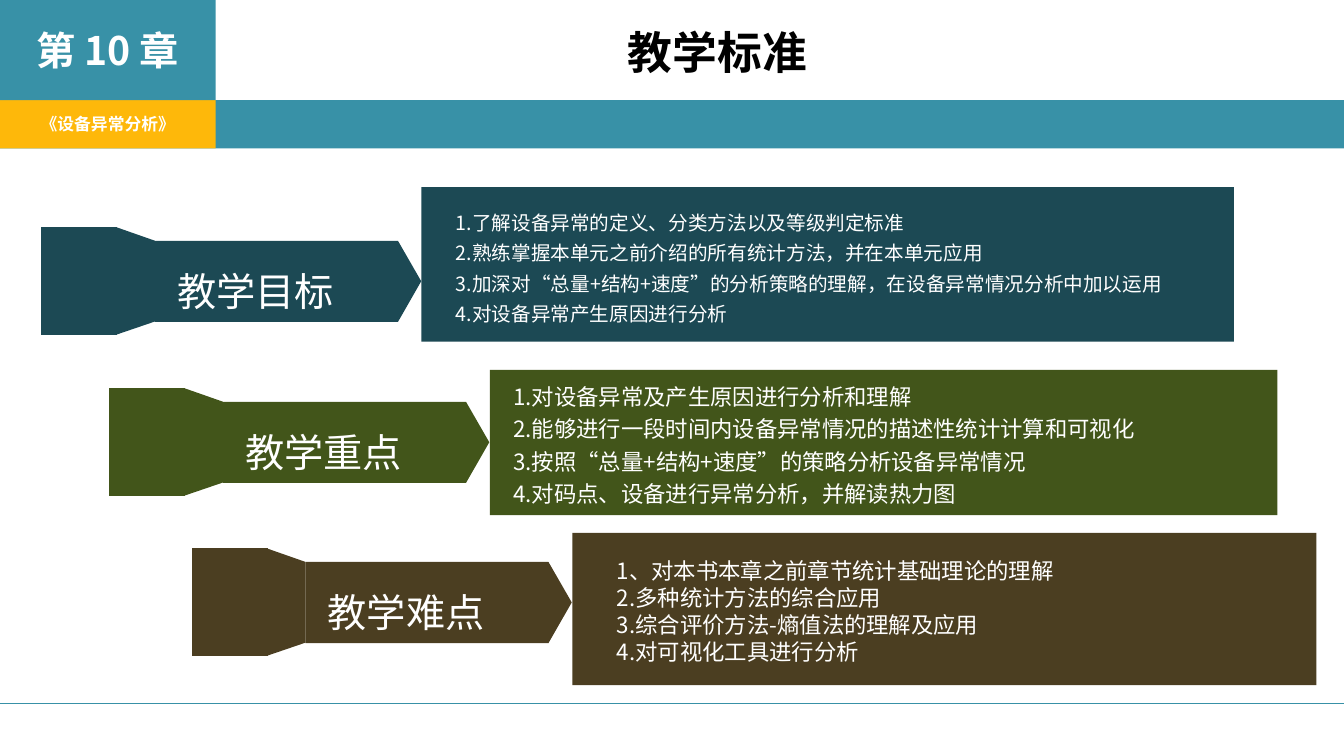
from dataclasses import dataclass

from lxml import etree
from pptx import Presentation
from pptx.dml.color import RGBColor
from pptx.enum.shapes import MSO_CONNECTOR as Link, MSO_SHAPE as Form
from pptx.enum.text import MSO_ANCHOR as Anchor, PP_ALIGN as Align
from pptx.oxml.ns import qn
from pptx.util import Pt

FONT = "Noto Sans CJK SC"
TEAL = RGBColor(0x38, 0x91, 0xA7)
GOLD = RGBColor(0xFE, 0xB8, 0x0A)
NAVY = RGBColor(0x1C, 0x49, 0x54)
OLIVE = RGBColor(0x42, 0x55, 0x1A)
BROWN = RGBColor(0x4B, 0x3E, 0x21)
WHITE = RGBColor(0xFF, 0xFF, 0xFF)
BLACK = RGBColor(0, 0, 0)

WIDE, HIGH = 960, 540
SIDE, HEAD, BAND = 154.1, 71.5, 34.5

# Outlines of one tag, measured from its top left corner
TAIL = [(0, 0), (54.5, 0), (54.5, 77), (0, 77)]
NECK = [(53.5, 0), (81.4, 9.8), (81.4, 67.5), (53.5, 77)]
ARROW = [(81.4, 9.8), (255, 9.8), (271.6, 38.7), (255, 67.7), (81.4, 67.7)]


@dataclass(frozen=True)
class Box:
    x: float
    y: float
    w: float
    h: float

    def sides(self) -> tuple:
        return Pt(self.x), Pt(self.y), Pt(self.w), Pt(self.h)


@dataclass(frozen=True)
class Topic:
    name: str
    color: RGBColor
    x: float
    y: float
    panel: Box
    body: Box
    size: float
    gap: float
    lines: tuple[str, ...]


TOPICS = [
    Topic("教学目标", NAVY, 29.3, 162.2,
          Box(301, 133.7, 580.3, 110.4), Box(325.6, 145.3, 552, 90), 14, 1.3,
          ("1.了解设备异常的定义、分类方法以及等级判定标准",
           "2.熟练掌握本单元之前介绍的所有统计方法，并在本单元应用",
           "3.加深对“总量+结构+速度”的分析策略的理解，在设备异常情况分析中加以运用",
           "4.对设备异常产生原因进行分析")),
    Topic("教学重点", OLIVE, 77.9, 277.2,
          Box(350, 264.3, 562.4, 103.7), Box(366.7, 270, 543.6, 92.9), 16, 1.2,
          ("1.对设备异常及产生原因进行分析和理解",
           "2.能够进行一段时间内设备异常情况的描述性统计计算和可视化",
           "3.按照“总量+结构+速度”的策略分析设备异常情况",
           "4.对码点、设备进行异常分析，并解读热力图")),
    Topic("教学难点", BROWN, 136.8, 391.6,
          Box(408.9, 380.7, 531.4, 108.8), Box(440.7, 398.2, 375, 81.4), 16, 1,
          ("1、对本书本章之前章节统计基础理论的理解",
           "2.多种统计方法的综合应用",
           "3.综合评价方法-熵值法的理解及应用",
           "4.对可视化工具进行分析")),
]


def paint(shape, color: RGBColor) -> None:
    shape.shadow.inherit = False
    shape.fill.solid()
    shape.fill.fore_color.rgb = color
    shape.line.fill.background()


def block(slide, box: Box, color: RGBColor) -> None:
    paint(slide.shapes.add_shape(Form.RECTANGLE, *box.sides()), color)


def shape(slide, dots: list, x: float, y: float, color: RGBColor) -> None:
    """Draw a closed outline with its origin at x, y."""
    spots = [(Pt(x + a), Pt(y + b)) for a, b in dots]
    pen = slide.shapes.build_freeform(*spots[0])
    pen.add_line_segments(spots[1:], close=True)
    paint(pen.convert_to_shape(), color)


def write(slide, box: Box, text: str, size: float, color: RGBColor = WHITE,
          bold: bool = False, align: Align = Align.LEFT,
          anchor: Anchor = Anchor.TOP, gap: float = 1) -> None:
    frame = slide.shapes.add_textbox(*box.sides()).text_frame
    frame.word_wrap = True
    frame.vertical_anchor = anchor
    frame.margin_left = frame.margin_right = 0
    frame.margin_top = frame.margin_bottom = 0
    frame.text = text
    for para in frame.paragraphs:
        para.alignment = align
        para.line_spacing = gap
        for run in para.runs:
            font = run.font
            font.name, font.size, font.bold = FONT, Pt(size), bold
            font.color.rgb = color
            east = etree.SubElement(run._r.get_or_add_rPr(), qn("a:ea"))
            east.set("typeface", FONT)


def frame(slide) -> None:
    """Draw the header bands, the titles and the bottom rule."""
    badge, strip = Box(0, 0, SIDE, HEAD), Box(0, HEAD, SIDE, BAND)
    block(slide, Box(0, HEAD, WIDE, BAND), TEAL)
    block(slide, strip, GOLD)
    block(slide, badge, TEAL)
    rule = slide.shapes.add_connector(
        Link.STRAIGHT, Pt(0), Pt(502.4), Pt(WIDE), Pt(502.4))
    rule.line.color.rgb = TEAL
    rule.line.width = Pt(0.79)
    etree.SubElement(rule._element.spPr, qn("a:effectLst"))
    for box, text, size in ((badge, "第 10 章", 28), (strip, "《设备异常分析》", 12)):
        write(slide, box, text, size, bold=True, align=Align.CENTER,
              anchor=Anchor.MIDDLE)
    write(slide, Box(384, 18, 257, 38.9), "教学标准", 32, BLACK, True, Align.CENTER)


def draw(slide, topic: Topic) -> None:
    block(slide, topic.panel, topic.color)
    write(slide, topic.body, "\n".join(topic.lines), topic.size, gap=topic.gap)
    for dots in (ARROW, TAIL, NECK):
        shape(slide, dots, topic.x, topic.y, topic.color)
    write(slide, Box(topic.x + 97.4, topic.y + 28.8, 125.3, 33.8), topic.name, 28)


def main() -> None:
    deck = Presentation()
    deck.slide_width, deck.slide_height = Pt(WIDE), Pt(HIGH)
    slide = deck.slides.add_slide(deck.slide_layouts[6])
    frame(slide)
    for topic in TOPICS:
        draw(slide, topic)
    deck.save("out.pptx")


if __name__ == "__main__":
    main()
